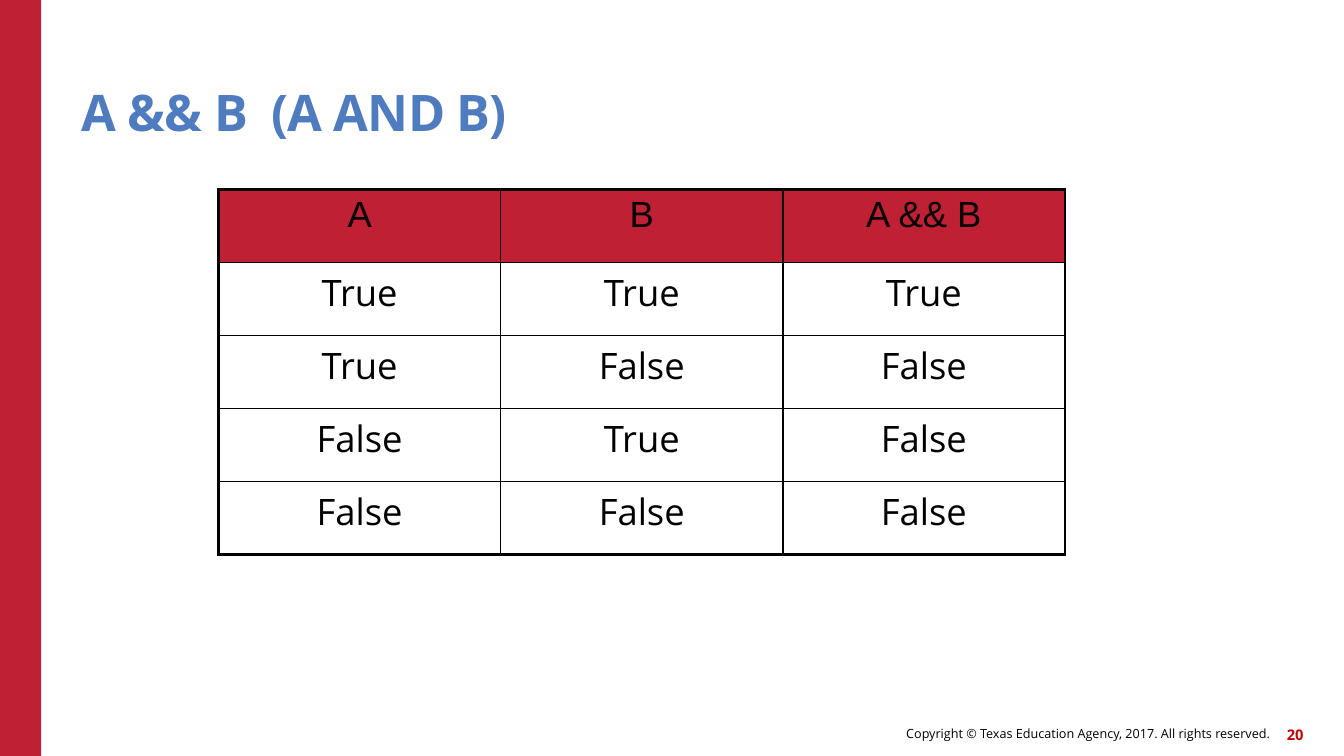
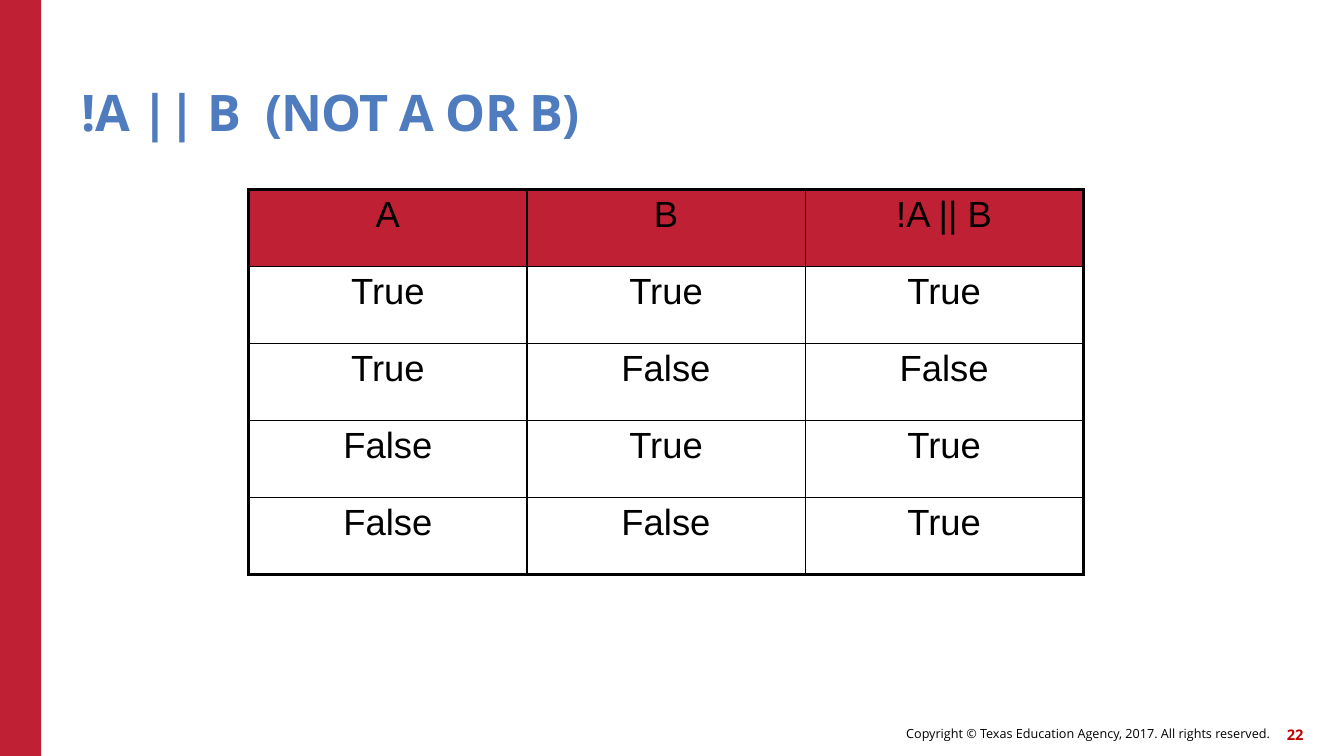
"""Build two truth-table slides with a shared band, title style and footer."""
from lxml.etree import SubElement
from pptx import Presentation
from pptx.dml.color import RGBColor
from pptx.enum.shapes import MSO_SHAPE as Shape
from pptx.enum.text import MSO_ANCHOR as Anchor, PP_ALIGN as Align
from pptx.oxml.ns import qn
from pptx.util import Cm, Pt

COLORS = {"band": "C02033", "title": "4E7CBE", "number": "C00000", "ink": "000000"}
COPYRIGHT = "Copyright © Texas Education Agency, 2017. All rights reserved."
INPUTS = [("True", "True"), ("True", "False"), ("False", "True"), ("False", "False")]
TABLES = [
    {"title": "A && B  (A AND B)", "number": "20", "header": "A && B",
     "results": ["True", "False", "False", "False"], "font": "Open Sans",
     "left": 5.51, "column": 7.11, "row": 1.84},
    {"title": "!A || B  (NOT A OR B)", "number": "22", "header": "!A || B",
     "results": ["True", "False", "True", "True"], "font": "Arial",
     "left": 6.27, "column": 7.01, "row": 1.94},
]


def write(frame, text, size, color, align, name="Open Sans", bold=False):
    paragraph = frame.paragraphs[0]
    paragraph.text = text
    paragraph.alignment = align
    font = paragraph.font
    font.name, font.size, font.bold = name, Pt(size), bold
    font.color.rgb = RGBColor.from_string(COLORS[color])
    return paragraph


def add_text(slide, box, anchor, *style, **options):
    frame = slide.shapes.add_textbox(*map(Cm, box)).text_frame
    frame.margin_left = frame.margin_right = frame.margin_top = frame.margin_bottom = 0
    frame.word_wrap = True
    frame.vertical_anchor = anchor
    return write(frame, *style, **options)


presentation = Presentation()
presentation.slide_width, presentation.slide_height = Cm(33.87), Cm(19.05)

for content in TABLES:
    slide = presentation.slides.add_slide(presentation.slide_layouts[6])
    band = slide.shapes.add_shape(Shape.RECTANGLE, 0, 0, Cm(1.04), presentation.slide_height)
    band.shadow.inherit = False
    band.fill.solid()
    band.fill.fore_color.rgb = RGBColor.from_string(COLORS["band"])
    band.line.fill.background()

    add_text(slide, (15.6, 18.08, 16.4, 0.81), Anchor.MIDDLE,
             COPYRIGHT, 9, "ink", Align.RIGHT)
    add_text(slide, (31.78, 18.11, 1.07, 0.81), Anchor.MIDDLE,
             content["number"], 10.5, "number", Align.RIGHT, bold=True)
    title = add_text(slide, (2.06, 1.14, 28, 2.44), Anchor.BOTTOM,
                     content["title"], 36, "title", Align.LEFT, bold=True)
    title.line_spacing = 0.9
    title.runs[0].font._element.set("spc", "-60")

    rows = [("A", "B", content["header"])]
    rows += [(*pair, result) for pair, result in zip(INPUTS, content["results"])]
    last_row, last_column = len(rows) - 1, len(rows[0]) - 1
    table = slide.shapes.add_table(
        len(rows), len(rows[0]), Cm(content["left"]), Cm(4.78),
        Cm(content["column"] * len(rows[0])), Cm(content["row"] * len(rows))).table
    table.first_row = table.horz_banding = False
    for column in table.columns:
        column.width = Cm(content["column"])

    for row_index, values in enumerate(rows):
        table.rows[row_index].height = Cm(content["row"])
        for column_index, value in enumerate(values):
            cell = table.cell(row_index, column_index)
            write(cell.text_frame, value, 26, "ink", Align.CENTER,
                  content["font"] if row_index else "Arial")
            outer_edges = {"lnL": column_index == 0, "lnR": column_index == last_column,
                           "lnT": row_index == 0, "lnB": row_index == last_row}
            properties = cell._tc.get_or_add_tcPr()
            for edge, outer in outer_edges.items():
                line = SubElement(properties, qn(f"a:{edge}"), w=str(Pt(2.25 if outer else 1)))
                fill = SubElement(line, qn("a:solidFill"))
                SubElement(fill, qn("a:srgbClr"), val=COLORS["ink"])
            if row_index == 0:
                cell.fill.solid()
                cell.fill.fore_color.rgb = RGBColor.from_string(COLORS["band"])
            else:
                cell.fill.background()

presentation.save("out.pptx")
